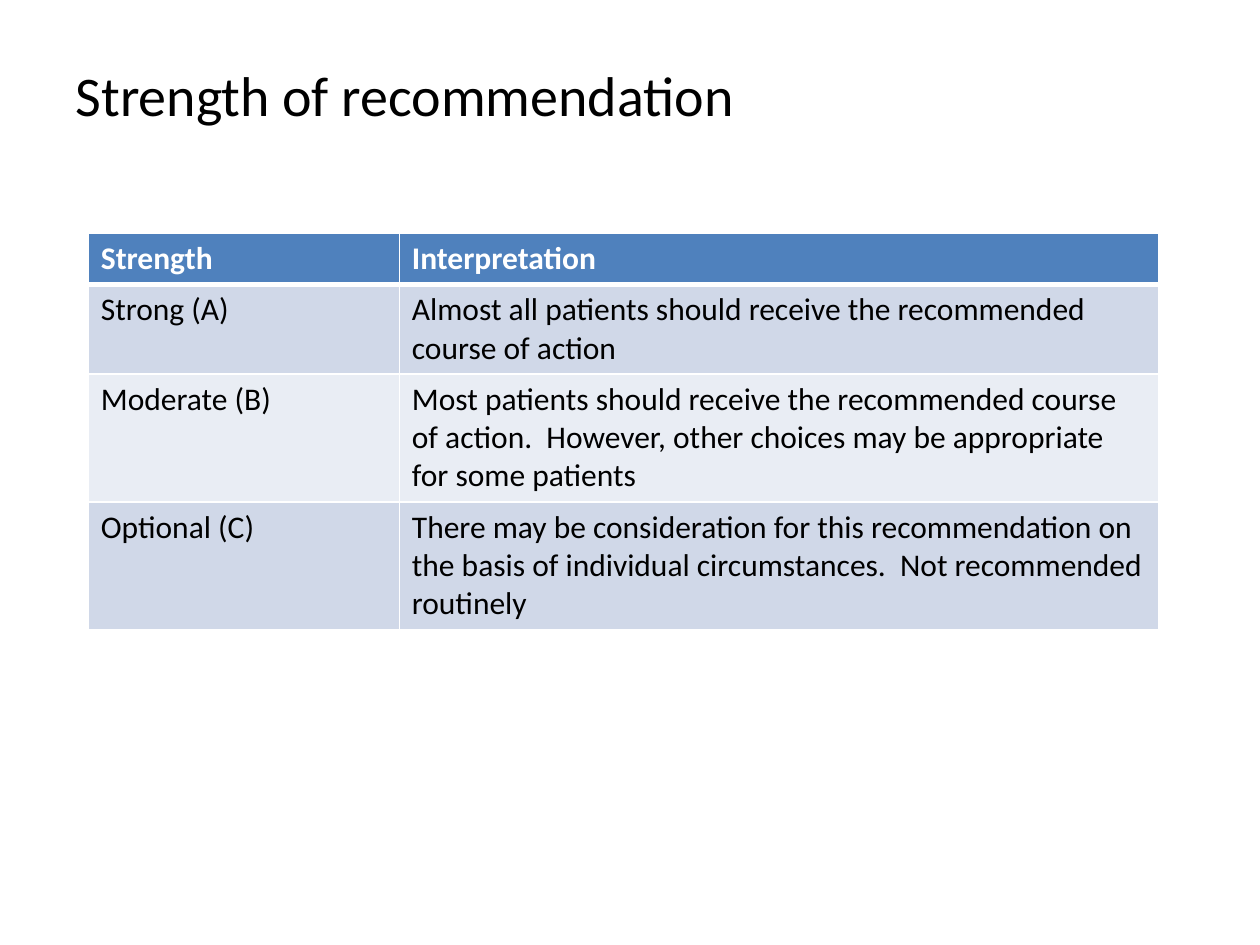
from pptx import Presentation
from pptx.dml.color import RGBColor
from pptx.enum.text import MSO_ANCHOR as Anchor, PP_ALIGN as Align
from pptx.oxml import parse_xml
from pptx.oxml.ns import nsdecls
from pptx.util import Cm, Pt

ROWS = [
    ("Strength", "Interpretation"),
    ("Strong (A)", "Almost all patients should receive the recommended course of action"),
    ("Moderate (B)", "Most patients should receive the recommended course of action.  "
                     "However, other choices may be appropriate for some patients"),
    ("Optional (C)", "There may be consideration for this recommendation on the basis of "
                     "individual circumstances.  Not recommended routinely"),
]


def color(value):
    return RGBColor.from_string(value)


class SlideBuilder:
    font = "Calibri"
    black, white = "000000", "FFFFFF"
    header_fill = "4F81BD"
    band_fills = ("D0D8E8", "E9EDF4")

    def __init__(self, deck):
        self.page = deck.slides.add_slide(deck.slide_layouts[5])

    def add_text(self, frame, text, fill, **formats):
        para = frame.paragraphs[0]
        para.alignment = Align.LEFT
        span = para.add_run()
        span.text = text
        for name, value in {"name": self.font, **formats}.items():
            setattr(span.font, name, value)
        span.font.color.rgb = color(fill)

    def title(self, text, left, top, width, height):
        box = self.page.shapes.title
        place = {"left": left, "top": top, "width": width, "height": height}
        for name, value in place.items():
            setattr(box, name, Cm(value))
        box.text_frame.vertical_anchor = Anchor.TOP
        self.add_text(box.text_frame, text, self.black, size=Pt(32))

    def border(self, cell, side, width):
        cell._tc.get_or_add_tcPr().append(parse_xml(
            f'<a:{side} {nsdecls("a")} w="{Pt(width)}"><a:solidFill>'
            f'<a:srgbClr val="{self.white}"/></a:solidFill></a:{side}>'))

    def table(self, rows, left, top, widths, row_height, height):
        """Row height is a minimum: rows grow with their text to fill the height."""
        frame = self.page.shapes.add_table(
            len(rows), len(widths), Cm(left), Cm(top), Cm(sum(widths)), Cm(height))
        grid = frame.table
        for column, width in zip(grid.columns, widths):
            column.width = Cm(width)
        for index, texts in enumerate(rows):
            grid.rows[index].height = Cm(row_height)
            header = index == 0
            fill = self.header_fill if header else self.band_fills[(index - 1) % 2]
            edges = {"lnL": 1, "lnR": 1, "lnT": 3 if index == 1 else 1, "lnB": 3 if header else 1}
            for cell, text in zip(grid.rows[index].cells, texts):
                for side, width in edges.items():
                    self.border(cell, side, width)
                cell.fill.solid()
                cell.fill.fore_color.rgb = color(fill)
                self.add_text(cell.text_frame, text, self.white if header else self.black,
                              size=Pt(18), bold=header)
        frame.height = Cm(height)


def main():
    deck = Presentation()
    deck.slide_width, deck.slide_height = Cm(25.4), Cm(19.05)
    builder = SlideBuilder(deck)
    builder.title("Strength of recommendation", 1.27, 1.09, 22.7, 3.33)
    builder.table(ROWS, left=1.78, top=4.7, widths=(6.27, 15.3), row_height=0.86, height=7.87)
    deck.save("out.pptx")


if __name__ == "__main__":
    main()
